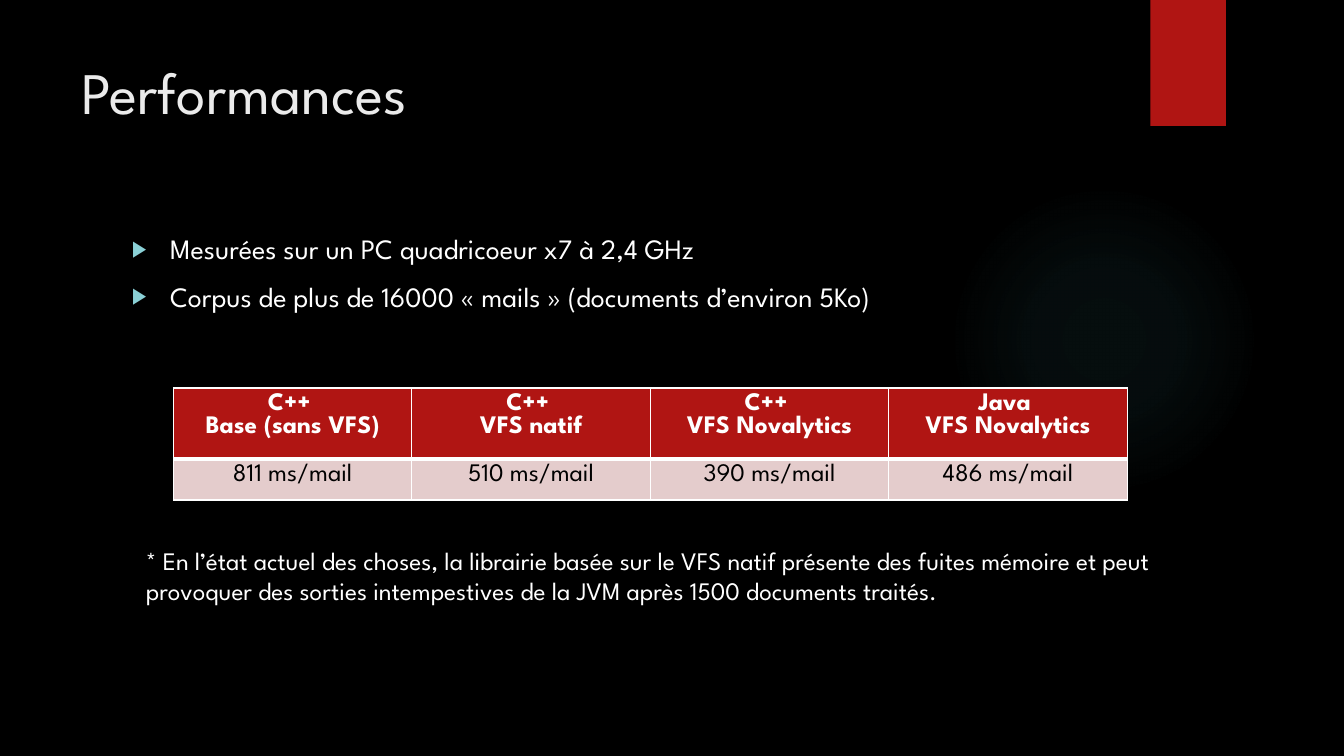
from lxml.etree import SubElement
from pptx import Presentation
from pptx.dml.color import RGBColor
from pptx.enum.shapes import MSO_SHAPE
from pptx.enum.text import MSO_ANCHOR, PP_ALIGN
from pptx.oxml import parse_xml
from pptx.oxml.ns import nsdecls, qn
from pptx.util import Inches, Pt

TITLE = "Performances"
BULLETS = [
    "Mesurées sur un PC quadricoeur x7 à 2,4 GHz",
    "Corpus de plus de 16000 «\u00a0mails\u00a0» (documents d’environ 5Ko)",
]
RESULTS = [
    (("C++ ", "Base (sans VFS)"), "811 ms/mail"),
    (("C++ ", "VFS natif"), "510 ms/mail"),
    (("C++ ", "VFS Novalytics"), "390 ms/mail"),
    (("Java ", "VFS Novalytics"), "486 ms/mail"),
]
NOTE = ("* En l’état actuel des choses, la librairie basée sur le VFS natif présente des "
        "fuites mémoire et peut provoquer des sorties intempestives de la JVM après 1500 "
        "documents traités.")

FONT = "League Spartan"
BLACK = RGBColor(0x00, 0x00, 0x00)
WHITE = RGBColor(0xFF, 0xFF, 0xFF)
PALE = RGBColor(0xEB, 0xEB, 0xEB)
RED = RGBColor(0xB0, 0x15, 0x13)
PINK = RGBColor(0xE4, 0xCC, 0xCC)
AQUA = RGBColor(0x8A, 0xD0, 0xD6)
GLOW = RGBColor(0x50, 0xB9, 0xC1)
GLOW_STOPS = [(0, 7), (36, 6), (69, 0)]
COL_W, ROW_H = 2.365, (0.56, 0.41)


def add_run(p, text, size, color, bold=False):
    r = p.add_run()
    r.text = text
    r.font.name, r.font.size, r.font.bold = FONT, Pt(size), bold
    r.font.color.rgb = color


def add_box(s, *box):
    tf = s.shapes.add_textbox(*map(Inches, box)).text_frame
    tf.word_wrap = True
    return tf


def add_plain(s, kind, *box):
    sp = s.shapes.add_shape(kind, *map(Inches, box))
    sp.shadow.inherit = False
    sp.line.fill.background()
    return sp


def add_glow(s):
    sp = add_plain(s, MSO_SHAPE.OVAL, 9.41, 1.83, 3.08, 3.08)
    sp.fill.gradient()
    stops = "".join(
        f'<a:gs pos="{pos * 1000}"><a:srgbClr val="{GLOW}">'
        f'<a:alpha val="{alpha * 1000}"/></a:srgbClr></a:gs>' for pos, alpha in GLOW_STOPS)
    grad = sp._element.spPr.find(qn("a:gradFill"))
    grad.getparent().replace(grad, parse_xml(
        f'<a:gradFill {nsdecls("a")}><a:gsLst>{stops}</a:gsLst><a:path path="circle">'
        '<a:fillToRect l="50000" t="50000" r="50000" b="50000"/></a:path></a:gradFill>'))


def add_bullet(p):
    pPr = p._p.get_or_add_pPr()
    pPr.set("marL", str(Inches(0.38)))
    pPr.set("indent", str(-Inches(0.38)))
    SubElement(SubElement(pPr, qn("a:buClr")), qn("a:srgbClr"), val=str(AQUA))
    SubElement(pPr, qn("a:buSzPct"), val="80000")
    SubElement(pPr, qn("a:buFont"), typeface="Arial")
    SubElement(pPr, qn("a:buChar"), char="▶")


def style_cell(cell, lines, fill, color, bold, bottom):
    cell.fill.solid()
    cell.fill.fore_color.rgb = fill
    cell.vertical_anchor = MSO_ANCHOR.TOP
    tf = cell.text_frame
    for i, line in enumerate(lines):
        p = tf.add_paragraph() if i else tf.paragraphs[0]
        p.alignment = PP_ALIGN.CENTER
        add_run(p, line, 18, color, bold)
    tcPr = cell._tc.get_or_add_tcPr()
    for i, (side, width) in enumerate((("L", 1), ("R", 1), ("T", 1), ("B", bottom))):
        tcPr.insert(i, parse_xml(
            f'<a:ln{side} {nsdecls("a")} w="{Pt(width)}"><a:solidFill>'
            f'<a:srgbClr val="{WHITE}"/></a:solidFill></a:ln{side}>'))


def add_results(s):
    tbl = s.shapes.add_table(2, len(RESULTS), Inches(1.72), Inches(3.85),
                             Inches(COL_W * len(RESULTS)), Inches(sum(ROW_H))).table
    for row, height in zip(tbl.rows, ROW_H):
        row.height = Inches(height)
    for c, (head, value) in enumerate(RESULTS):
        tbl.columns[c].width = Inches(COL_W)
        style_cell(tbl.cell(0, c), head, RED, WHITE, True, 3)
        style_cell(tbl.cell(1, c), [value], PINK, BLACK, False, 1)


def main():
    """Build the performance slide."""
    prs = Presentation()
    prs.slide_width, prs.slide_height = Inches(13.33), Inches(7.5)
    s = prs.slides.add_slide(prs.slide_layouts[6])
    s.background.fill.solid()
    s.background.fill.fore_color.rgb = BLACK
    add_glow(s)
    tab = add_plain(s, MSO_SHAPE.RECTANGLE, 11.41, 0, 0.75, 1.25)
    tab.fill.solid()
    tab.fill.fore_color.rgb = RED
    add_run(add_box(s, 0.71, 0.5, 10.29, 1.53).paragraphs[0], TITLE, 42, PALE)
    tf = add_box(s, 1.21, 2.25, 9.78, 4.59)
    for i, text in enumerate(BULLETS):
        p = tf.add_paragraph() if i else tf.paragraphs[0]
        add_bullet(p)
        if i:
            p.space_before = Pt(10)
        add_run(p, text, 20, WHITE)
    add_results(s)
    add_run(add_box(s, 1.35, 5.36, 10.73, 1.01).paragraphs[0], NOTE, 18, WHITE)
    prs.save("out.pptx")


if __name__ == "__main__":
    main()
